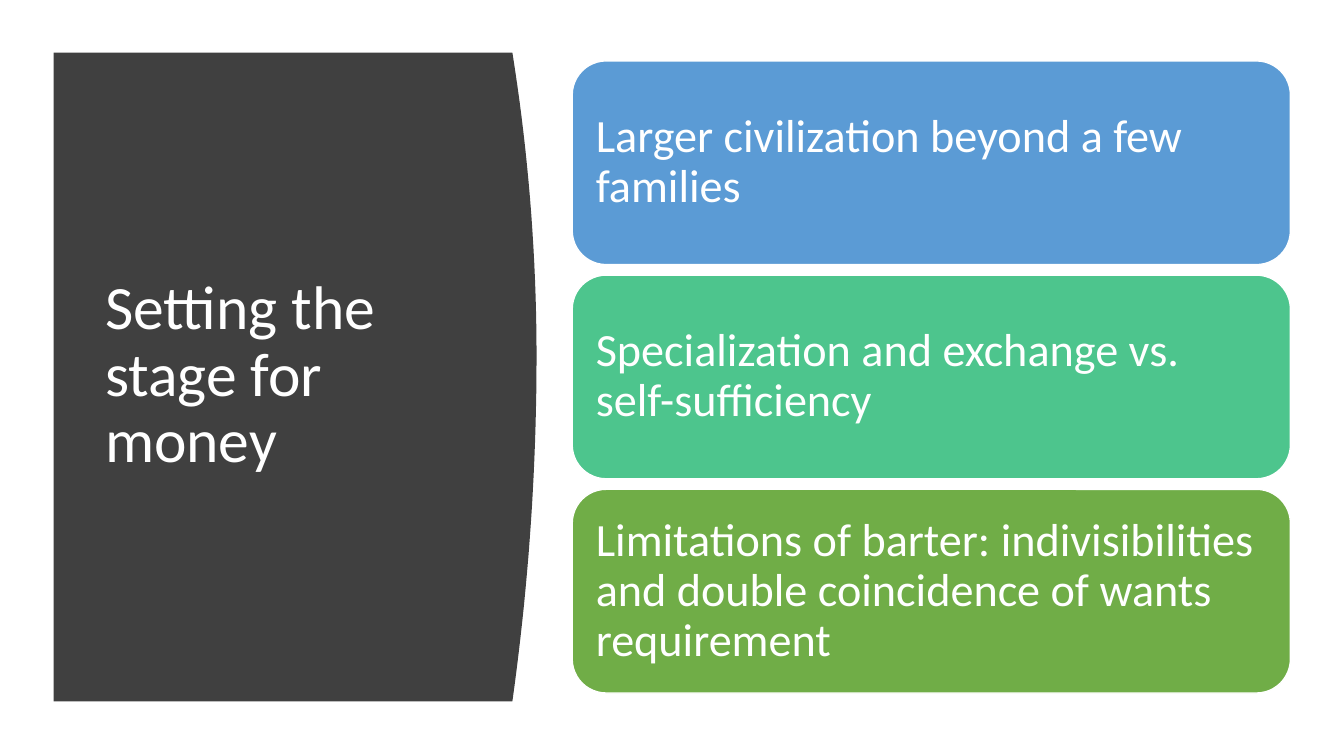
"""Build the slide on setting the stage for money."""
from dataclasses import dataclass

from pptx import Presentation
from pptx.dml.color import RGBColor
from pptx.enum.shapes import MSO_SHAPE as Shape
from pptx.enum.text import MSO_ANCHOR as Anchor, PP_ALIGN as Align
from pptx.util import Pt

PX = 9525


@dataclass(frozen=True)
class Theme:
    font: str = "Calibri"
    white: RGBColor = RGBColor(0xFF, 0xFF, 0xFF)
    panel: RGBColor = RGBColor(0x40, 0x40, 0x40)
    blue: RGBColor = RGBColor(0x5B, 0x9B, 0xD5)
    teal: RGBColor = RGBColor(0x4D, 0xC5, 0x8D)
    green: RGBColor = RGBColor(0x70, 0xAD, 0x47)
    title_size: int = 44
    card_size: int = 33


theme = Theme()


def write(shape, words, size, inset_x, inset_y):
    frame = shape.text_frame
    frame.word_wrap = True
    frame.vertical_anchor = Anchor.MIDDLE
    frame.margin_left = frame.margin_right = inset_x * PX
    frame.margin_top = frame.margin_bottom = inset_y * PX
    para = frame.paragraphs[0]
    para.text = words
    para.alignment = Align.LEFT
    para.line_spacing = 0.9
    para.font.name = theme.font
    para.font.size = Pt(size)
    para.font.color.rgb = theme.white


deck = Presentation()
deck.slide_width, deck.slide_height = 1280 * PX, 720 * PX
page = deck.slides.add_slide(deck.slide_layouts[6])

left, top, corner, bottom = 51, 50, 488, 668
peak_x, peak_y = 511, 339
steps = 40
edge = []
for step in range(steps + 1):
    y = top + (bottom - top) * step / steps
    reach = peak_y - top if y < peak_y else bottom - peak_y
    x = peak_x - (peak_x - corner) * ((y - peak_y) / reach) ** 2
    edge.append((x * PX, y * PX))
outline = page.shapes.build_freeform(left * PX, top * PX)
outline.add_line_segments(edge + [(left * PX, bottom * PX)], close=True)
panel = outline.convert_to_shape()
panel.shadow.inherit = False
panel.fill.solid()
panel.fill.fore_color.rgb = theme.panel
panel.line.fill.background()

title = page.shapes.add_textbox(90 * PX, 107 * PX, 359 * PX, 503 * PX)
write(title, "Setting the stage for money", theme.title_size, 10, 5)

cards = [
    ("Larger civilization beyond a few families", theme.blue),
    ("Specialization and exchange vs. self-sufficiency", theme.teal),
    ("Limitations of barter: indivisibilities and double coincidence of wants requirement", theme.green),
]
card_top, card_height, gap = 58, 194, 10
for index, (words, color) in enumerate(cards):
    y = card_top + index * (card_height + gap)
    card = page.shapes.add_shape(Shape.ROUNDED_RECTANGLE, 545 * PX, y * PX, 684 * PX, card_height * PX)
    card.shadow.inherit = False
    card.fill.solid()
    card.fill.fore_color.rgb = color
    card.line.color.rgb = theme.white
    card.line.width = Pt(1)
    write(card, words, theme.card_size, 13, 13)

deck.save("out.pptx")
